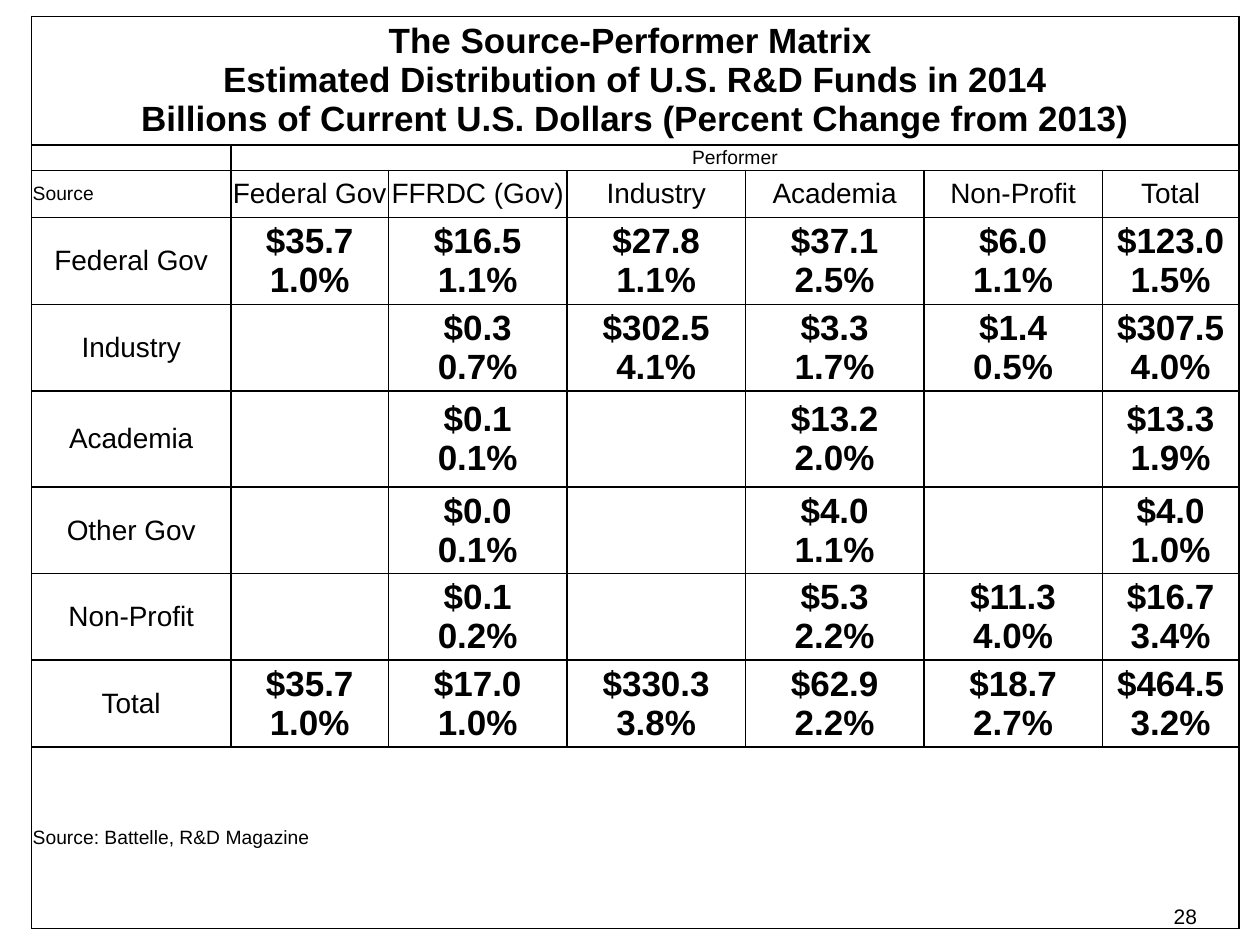
import dataclasses

import lxml.etree
import pptx
import pptx.dml.color
import pptx.enum.text
import pptx.oxml.ns
import pptx.util

Pt = pptx.util.Pt
Align = pptx.enum.text.PP_ALIGN
Anchor = pptx.enum.text.MSO_ANCHOR
qn = pptx.oxml.ns.qn

BLACK = pptx.dml.color.RGBColor(0, 0, 0)
FONT = "Arial"
INSET = 0.72

COLUMN_WIDTHS = [114, 90, 102, 102, 102, 102, 78]
ROW_HEIGHTS = [73, 14, 27, 49, 49, 55, 49, 49, 49, 104]


@dataclasses.dataclass(frozen=True)
class TextStyle:
    size: float
    bold: bool = False
    align: Align = Align.CENTER


TITLE = TextStyle(20, bold=True)
AMOUNT = TextStyle(20, bold=True)
LABEL = TextStyle(16)
SMALL = TextStyle(11)
SMALL_LEFT = TextStyle(11, align=Align.LEFT)
PAGE_NUMBER = TextStyle(12, align=Align.RIGHT)


@dataclasses.dataclass(frozen=True)
class SourceRow:
    name: str
    amounts: list[str]  # dollars and percent change, one entry per performer


TITLE_LINES = [
    "The Source-Performer Matrix ",
    "Estimated Distribution of U.S. R&D Funds in 2014",
    "Billions of Current U.S. Dollars (Percent Change from 2013)",
]
PERFORMERS = ["Federal Gov", "FFRDC (Gov)", "Industry", "Academia", "Non-Profit", "Total"]
SOURCES = [
    SourceRow("Federal Gov", ["$35.7 1.0%", "$16.5 1.1%", "$27.8 1.1%",
                              "$37.1 2.5%", "$6.0 1.1%", "$123.0 1.5%"]),
    SourceRow("Industry", ["", "$0.3 0.7%", "$302.5 4.1%",
                           "$3.3 1.7%", "$1.4 0.5%", "$307.5 4.0%"]),
    SourceRow("Academia", ["", "$0.1 0.1%", "", "$13.2 2.0%", "", "$13.3 1.9%"]),
    SourceRow("Other Gov", ["", "$0.0 0.1%", "", "$4.0 1.1%", "", "$4.0 1.0%"]),
    SourceRow("Non-Profit", ["", "$0.1 0.2%", "", "$5.3 2.2%", "$11.3 4.0%", "$16.7 3.4%"]),
    SourceRow("Total", ["$35.7 1.0%", "$17.0 1.0%", "$330.3 3.8%",
                        "$62.9 2.2%", "$18.7 2.7%", "$464.5 3.2%"]),
]


def add_span(para, text: str, style: TextStyle) -> None:
    para.alignment = style.align
    span = para.add_run()
    span.text = text
    span.font.name = FONT
    span.font.size = Pt(style.size)
    span.font.bold = style.bold
    span.font.color.rgb = BLACK


def write_paragraphs(frame, lines: list[str], style: TextStyle) -> None:
    for index, line in enumerate(lines):
        para = frame.paragraphs[0] if index == 0 else frame.add_paragraph()
        add_span(para, line, style)


def write_title(frame) -> None:
    para = frame.paragraphs[0]
    for index, line in enumerate(TITLE_LINES):
        if index:
            para.add_line_break()
        add_span(para, line, TITLE)


def format_cell(cell) -> None:
    """Clear the fill, set narrow margins and draw a thin black border."""
    cell.fill.background()
    cell.vertical_anchor = Anchor.MIDDLE
    cell.margin_left = cell.margin_right = Pt(INSET)
    cell.margin_top = cell.margin_bottom = Pt(INSET)
    properties = cell._tc.get_or_add_tcPr()
    for index, side in enumerate(("lnL", "lnR", "lnT", "lnB")):
        line = lxml.etree.Element(qn(f"a:{side}"), w=str(Pt(1)))
        fill = lxml.etree.SubElement(line, qn("a:solidFill"))
        lxml.etree.SubElement(fill, qn("a:srgbClr"), val=str(BLACK))
        properties.insert(index, line)
    # An empty cell needs a small end mark, or it would stretch a low row
    if not cell.text:
        para = cell.text_frame.paragraphs[0]
        lxml.etree.SubElement(para._p, qn("a:endParaRPr"), sz=str(SMALL.size * 100))


def add_matrix(page) -> None:
    frame = page.shapes.add_table(
        len(ROW_HEIGHTS), len(COLUMN_WIDTHS), Pt(18), Pt(9.3),
        Pt(sum(COLUMN_WIDTHS)), Pt(sum(ROW_HEIGHTS)))
    table = frame.table
    table.first_row = table.horz_banding = False
    for column, width in zip(table.columns, COLUMN_WIDTHS):
        column.width = Pt(width)
    for row, height in zip(table.rows, ROW_HEIGHTS):
        row.height = Pt(height)

    # Full-width title and footer, and the performer heading
    last_row, last_column = len(ROW_HEIGHTS) - 1, len(COLUMN_WIDTHS) - 1
    for row, column in ((0, 0), (1, 1), (last_row, 0)):
        table.cell(row, column).merge(table.cell(row, last_column))
    write_title(table.cell(0, 0).text_frame)
    write_paragraphs(table.cell(1, 1).text_frame, ["Performer"], SMALL)
    write_paragraphs(table.cell(last_row, 0).text_frame,
                     ["Source: Battelle, R&D Magazine"], SMALL_LEFT)

    # Column headings
    write_paragraphs(table.cell(2, 0).text_frame, ["Source"], SMALL_LEFT)
    for column, performer in enumerate(PERFORMERS, start=1):
        write_paragraphs(table.cell(2, column).text_frame, [performer], LABEL)

    # One row per funding source
    for row, source in enumerate(SOURCES, start=3):
        write_paragraphs(table.cell(row, 0).text_frame, [source.name], LABEL)
        for column, amount in enumerate(source.amounts, start=1):
            write_paragraphs(table.cell(row, column).text_frame, amount.split(), AMOUNT)

    for cell in table.iter_cells():
        format_cell(cell)


def add_page_number(page) -> None:
    box = page.shapes.add_textbox(Pt(624), Pt(505.5), Pt(60), Pt(29))
    frame = box.text_frame
    frame.word_wrap = True
    frame.vertical_anchor = Anchor.BOTTOM
    frame.margin_left = frame.margin_right = 0
    write_paragraphs(frame, ["28"], PAGE_NUMBER)


def main() -> None:
    deck = pptx.Presentation()
    deck.slide_width, deck.slide_height = Pt(720), Pt(540)
    page = deck.slides.add_slide(deck.slide_layouts.get_by_name("Blank"))
    add_page_number(page)
    add_matrix(page)
    deck.save("out.pptx")


if __name__ == "__main__":
    main()
